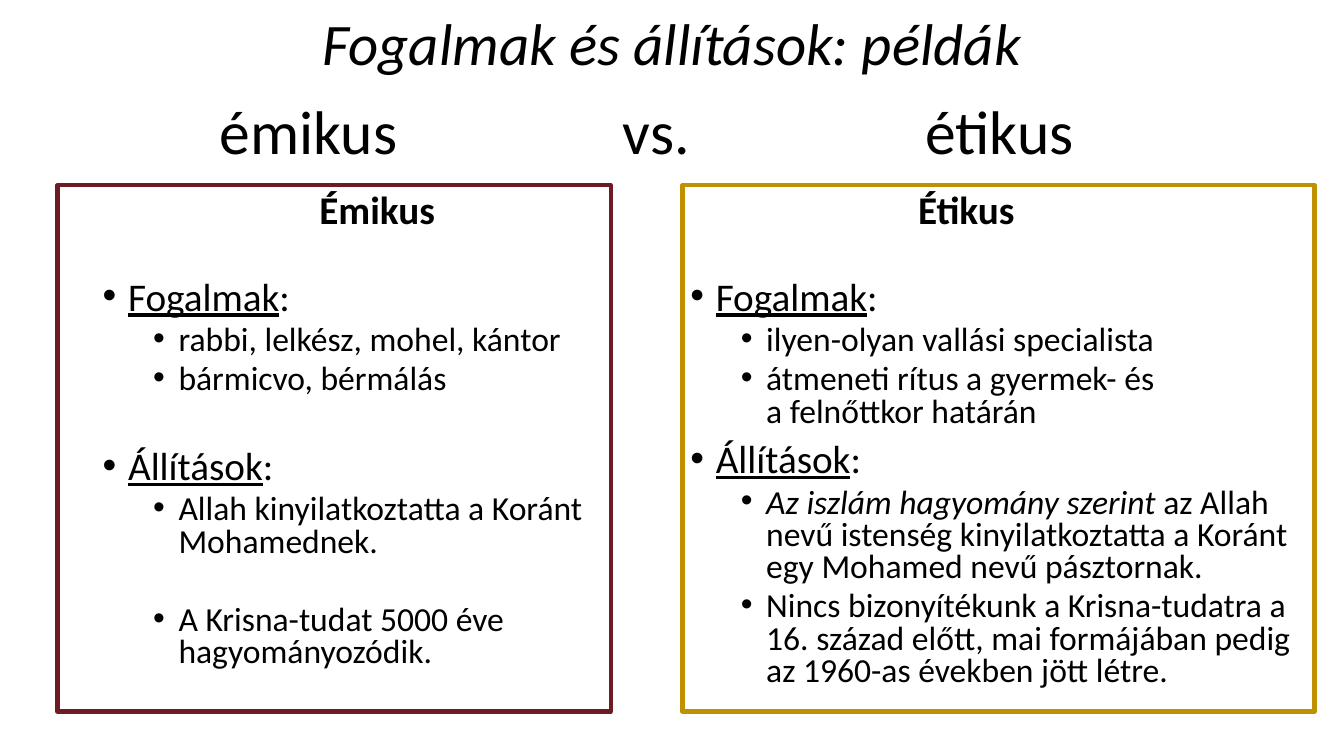
from dataclasses import dataclass

from lxml import etree
from pptx import Presentation
from pptx.dml.color import RGBColor
from pptx.enum.shapes import MSO_SHAPE
from pptx.enum.text import MSO_ANCHOR, MSO_AUTO_SIZE, PP_ALIGN
from pptx.oxml.ns import qn
from pptx.util import Cm, Pt

RECTANGLE = MSO_SHAPE.RECTANGLE
TOP, MIDDLE = MSO_ANCHOR.TOP, MSO_ANCHOR.MIDDLE
LEFT, CENTER = PP_ALIGN.LEFT, PP_ALIGN.CENTER
FIT_SHAPE, NO_FIT = MSO_AUTO_SIZE.SHAPE_TO_FIT_TEXT, MSO_AUTO_SIZE.NONE

FONT = "Calibri"
COLORS = {"text": "000000", "emic": "6E1C24", "etic": "BF9000"}
PANEL_TOP, PANEL_HEIGHT = 4.67, 13.26
HEADING_HEIGHT = 2.29
BULLET_HANG = 0.64
LEVEL_STEP = 1.27


@dataclass(frozen=True)
class Area:
    left: float
    top: float
    width: float
    height: float


@dataclass(frozen=True)
class Item:
    text: str
    level: int = 1
    before: float = 5
    lead: str = ""


@dataclass(frozen=True)
class Column:
    heading: str
    color: str
    left: float
    heading_width: float
    list_width: float
    list_height: float
    frame_left: float
    frame_width: float
    items: tuple[Item, ...]


def term(text: str, before: float = 10) -> Item:
    return Item(":", 0, before, text)


COLUMNS = (
    Column("Émikus", "emic", 2.34, 14.33, 14.33, 10.97, 1.45, 13.94, (
        term("Fogalmak"),
        Item("rabbi, lelkész, mohel, kántor"),
        Item("bármicvo, bérmálás"),
        term("Állítások", 38),
        Item("Allah kinyilatkoztatta a Koránt Mohamednek."),
        Item("A Krisna-tudat 5000 éve hagyományozódik.", before=33),
    )),
    Column("Étikus", "etic", 17.15, 14.4, 16, 10.67, 17.2, 15.93, (
        term("Fogalmak"),
        Item("ilyen-olyan vallási specialista"),
        Item("átmeneti rítus a gyermek- és\na felnőttkor határán"),
        term("Állítások"),
        Item(" az Allah\nnevű istenség kinyilatkoztatta a Koránt "
             "egy Mohamed nevű pásztornak.",
             lead="Az iszlám hagyomány szerint"),
        Item("Nincs bizonyítékunk a Krisna-tudatra a 16. század előtt, "
             "mai formájában pedig az 1960-as években jött létre."),
    )),
)


def write(para, text: str, *, size: float, bold: bool = False,
          italic: bool = False, underline: bool = False) -> None:
    for index, line in enumerate(text.split("\n")):
        if index:
            para.add_line_break()
        span = para.add_run()
        span.text = line
        span.font.name = FONT
        span.font.size = Pt(size)
        span.font.bold = bold
        span.font.italic = italic
        span.font.underline = underline
        span.font.color.rgb = RGBColor.from_string(COLORS["text"])


def add_box(page, area: Area, anchor=TOP, fit=NO_FIT):
    box = page.shapes.add_textbox(
        Cm(area.left), Cm(area.top), Cm(area.width), Cm(area.height))
    frame = box.text_frame
    frame.word_wrap = True
    frame.auto_size = fit
    frame.vertical_anchor = anchor
    return frame


def add_line(page, area: Area, text: str, *, size: float, bold: bool = False,
             italic: bool = False, spacing: float = 1.0, fit=NO_FIT) -> None:
    para = add_box(page, area, fit=fit).paragraphs[0]
    para.alignment = CENTER
    para.line_spacing = spacing
    write(para, text, size=size, bold=bold, italic=italic)


def add_contrast(page, area: Area, words: tuple[str, ...], inset: float,
                 stops: tuple[float, ...]) -> None:
    frame = add_box(page, area, anchor=MIDDLE)
    frame.margin_left = Cm(inset)
    para = frame.paragraphs[0]
    para.alignment = LEFT
    para.line_spacing = 0.9
    properties = para._p.get_or_add_pPr()
    tabs = etree.SubElement(properties, qn("a:tabLst"))
    for stop in stops:
        etree.SubElement(tabs, qn("a:tab"), pos=str(Cm(stop)), algn="l")
    write(para, "\t".join(words), size=44)


def add_list(page, area: Area, items: tuple[Item, ...]) -> None:
    frame = add_box(page, area)
    for index, item in enumerate(items):
        para = frame.add_paragraph() if index else frame.paragraphs[0]
        para.level = item.level
        para.line_spacing = 0.8
        para.space_before = Pt(item.before)
        properties = para._p.get_or_add_pPr()
        properties.set("marL", str(Cm(BULLET_HANG + item.level * LEVEL_STEP)))
        properties.set("indent", str(-Cm(BULLET_HANG)))
        etree.SubElement(properties, qn("a:buFont"), typeface="Arial")
        etree.SubElement(properties, qn("a:buChar"), char="•")
        size = 24 if item.level else 28
        if item.lead:
            write(para, item.lead, size=size, italic=item.level == 1,
                  underline=item.level == 0)
        write(para, item.text, size=size)


def add_frame(page, area: Area, color: str) -> None:
    shape = page.shapes.add_shape(
        RECTANGLE, Cm(area.left), Cm(area.top), Cm(area.width), Cm(area.height))
    shape.shadow.inherit = False
    shape.fill.background()
    shape.line.color.rgb = RGBColor.from_string(COLORS[color])
    shape.line.width = Pt(3)


def add_column(page, column: Column) -> None:
    add_line(page, Area(column.left, PANEL_TOP, column.heading_width, HEADING_HEIGHT),
             column.heading, size=28, bold=True, spacing=0.9)
    add_list(page, Area(column.left, PANEL_TOP + HEADING_HEIGHT,
                        column.list_width, column.list_height), column.items)
    add_frame(page, Area(column.frame_left, PANEL_TOP,
                         column.frame_width, PANEL_HEIGHT), column.color)


def main() -> None:
    deck = Presentation()
    deck.slide_width, deck.slide_height = Cm(33.87), Cm(19.05)
    page = deck.slides.add_slide(deck.slide_layouts[6])
    for column in COLUMNS:
        add_column(page, column)
    add_contrast(page, Area(1.7, 1.55, 29.21, 3.68),
                 ("émikus", "vs.", "étikus"), 3.84, (10.16, 17.78))
    add_line(page, Area(6.15, 0.05, 21.56, 2.06), "Fogalmak és állítások: példák",
             size=42, italic=True, fit=FIT_SHAPE)
    deck.save("out.pptx")


if __name__ == "__main__":
    main()
